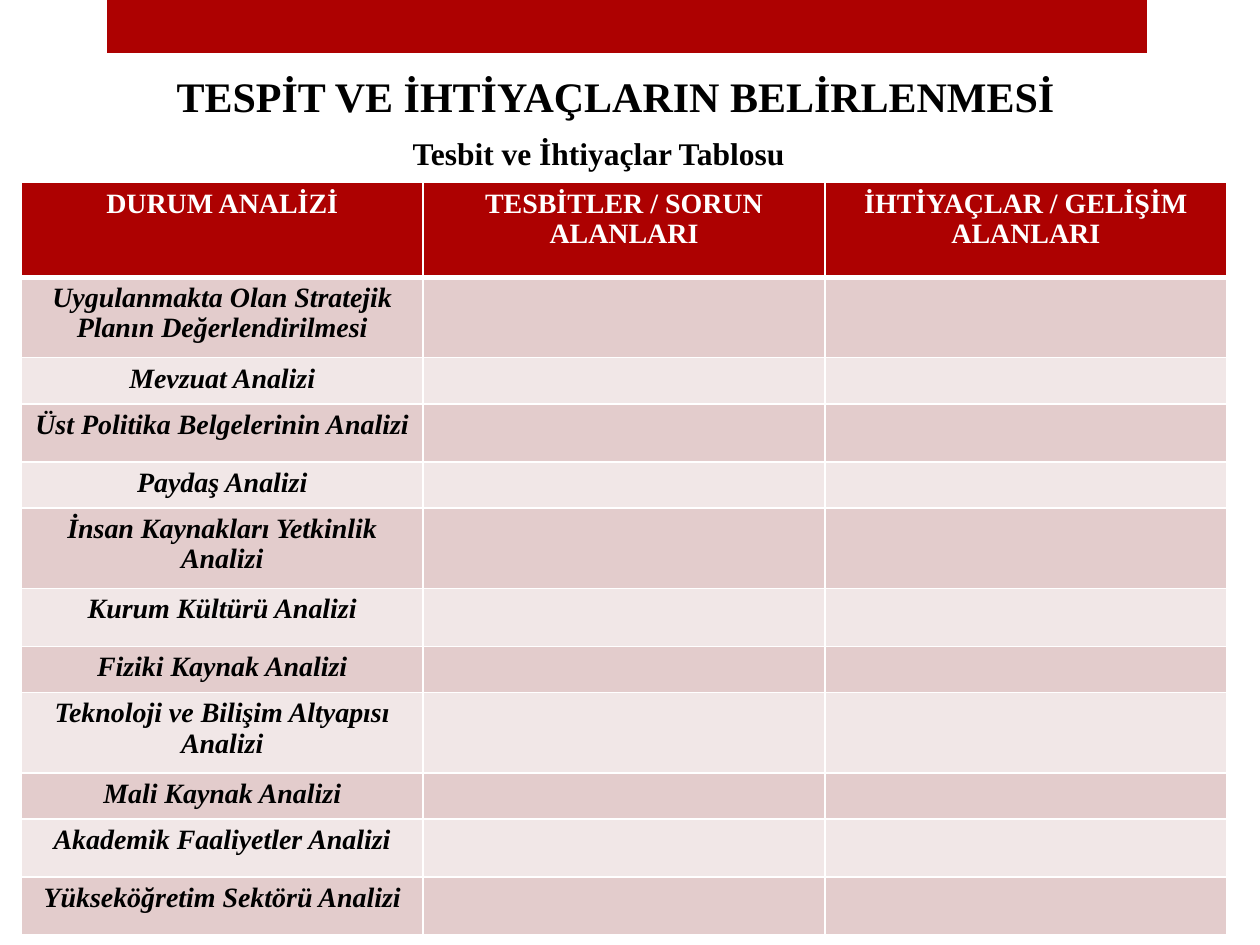
from lxml.etree import SubElement
from pptx import Presentation
from pptx.dml.color import RGBColor
from pptx.enum.shapes import MSO_SHAPE
from pptx.enum.text import MSO_ANCHOR, PP_ALIGN
from pptx.oxml.ns import qn
from pptx.util import Cm, Pt

THEME = {
    "font": "Times New Roman",
    "red": "AD0101", "dark": "E3CCCC", "light": "F1E7E7",
    "white": "FFFFFF", "black": "000000",
    "title": 24, "subtitle": 18, "cell": 16,
    "border": 1, "header_border": 3, "line_spacing": 0.97,
}

TITLE = "TESPİT VE İHTİYAÇLARIN BELİRLENMESİ"
SUBTITLE = "Tesbit ve İhtiyaçlar Tablosu"
HEADERS = ["DURUM ANALİZİ", "TESBİTLER / SORUN ALANLARI", "İHTİYAÇLAR / GELİŞİM ALANLARI"]
HEIGHTS = {"header": 1.91, "double": 1.62, "single": 0.93, "loose": 1.17}
ANALYSES = [
    ("Uygulanmakta Olan Stratejik Planın Değerlendirilmesi", "double"),
    ("Mevzuat Analizi", "single"),
    ("Üst Politika Belgelerinin Analizi", "loose"),
    ("Paydaş Analizi", "single"),
    ("İnsan Kaynakları Yetkinlik Analizi", "double"),
    ("Kurum Kültürü Analizi", "loose"),
    ("Fiziki Kaynak Analizi", "single"),
    ("Teknoloji ve Bilişim Altyapısı Analizi", "double"),
    ("Mali Kaynak Analizi", "single"),
    ("Akademik Faaliyetler Analizi", "loose"),
    ("Yükseköğretim Sektörü Analizi", "loose"),
]
COL_WIDTH = 8.1


def color(name):
    return RGBColor.from_string(THEME[name])


def write(tf, text, size, ink="black", italic=False):
    p = tf.paragraphs[0]
    p.alignment = PP_ALIGN.CENTER
    r = p.add_run()
    r.text = text
    r.font.name = THEME["font"]
    r.font.size = Pt(THEME[size])
    r.font.bold = True
    r.font.italic = italic
    r.font.color.rgb = color(ink)
    return p


def set_borders(cell, top, bottom):
    tc_pr = cell._tc.get_or_add_tcPr()
    widths = {"L": THEME["border"], "R": THEME["border"], "T": top, "B": bottom}
    for i, (side, width) in enumerate(widths.items()):
        ln = SubElement(tc_pr, qn(f"a:ln{side}"), w=str(Pt(width)))
        fill = SubElement(ln, qn("a:solidFill"))
        SubElement(fill, qn("a:srgbClr"), val=THEME["white"])
        tc_pr.insert(i, ln)


def add_analysis_table(s):
    rows = [(HEADERS, "header")] + [([name, "", ""], kind) for name, kind in ANALYSES]
    heights = [HEIGHTS[kind] for _, kind in rows]
    table = s.shapes.add_table(len(rows), len(HEADERS), Cm(0.43), Cm(3.68),
                               Cm(COL_WIDTH * len(HEADERS)), Cm(sum(heights))).table
    for col in table.columns:
        col.width = Cm(COL_WIDTH)
    for i, (texts, _) in enumerate(rows):
        table.rows[i].height = Cm(heights[i])
        band = "red" if i == 0 else "dark" if i % 2 else "light"
        top = THEME["header_border" if i == 1 else "border"]
        bottom = THEME["header_border" if i == 0 else "border"]
        for j, text in enumerate(texts):
            cell = table.cell(i, j)
            cell.fill.solid()
            cell.fill.fore_color.rgb = color(band)
            set_borders(cell, top, bottom)
            if text:
                p = write(cell.text_frame, text, "cell", "black" if i else "white", i > 0)
                p.line_spacing = THEME["line_spacing"]
            else:
                cell.margin_top = cell.margin_bottom = 0


def main():
    prs = Presentation()
    prs.slide_width, prs.slide_height = Cm(25.4), Cm(19.05)
    s = prs.slides.add_slide(prs.slide_layouts[5])

    bar = s.shapes.add_shape(MSO_SHAPE.RECTANGLE, Cm(2.16), 0, Cm(20.96), Cm(1.07))
    bar.shadow.inherit = False
    bar.fill.solid()
    bar.fill.fore_color.rgb = color("red")
    bar.line.fill.background()

    title = s.shapes.title
    title.left, title.top, title.width, title.height = Cm(2.21), Cm(1.3), Cm(20.4), Cm(1.27)
    title.text_frame.vertical_anchor = MSO_ANCHOR.TOP
    write(title.text_frame, TITLE, "title")

    add_analysis_table(s)

    sp = s.shapes.add_textbox(Cm(7.57), Cm(2.57), Cm(9), Cm(1.02))
    sp.text_frame.word_wrap = True
    write(sp.text_frame, SUBTITLE, "subtitle")

    prs.save("out.pptx")


if __name__ == "__main__":
    main()
